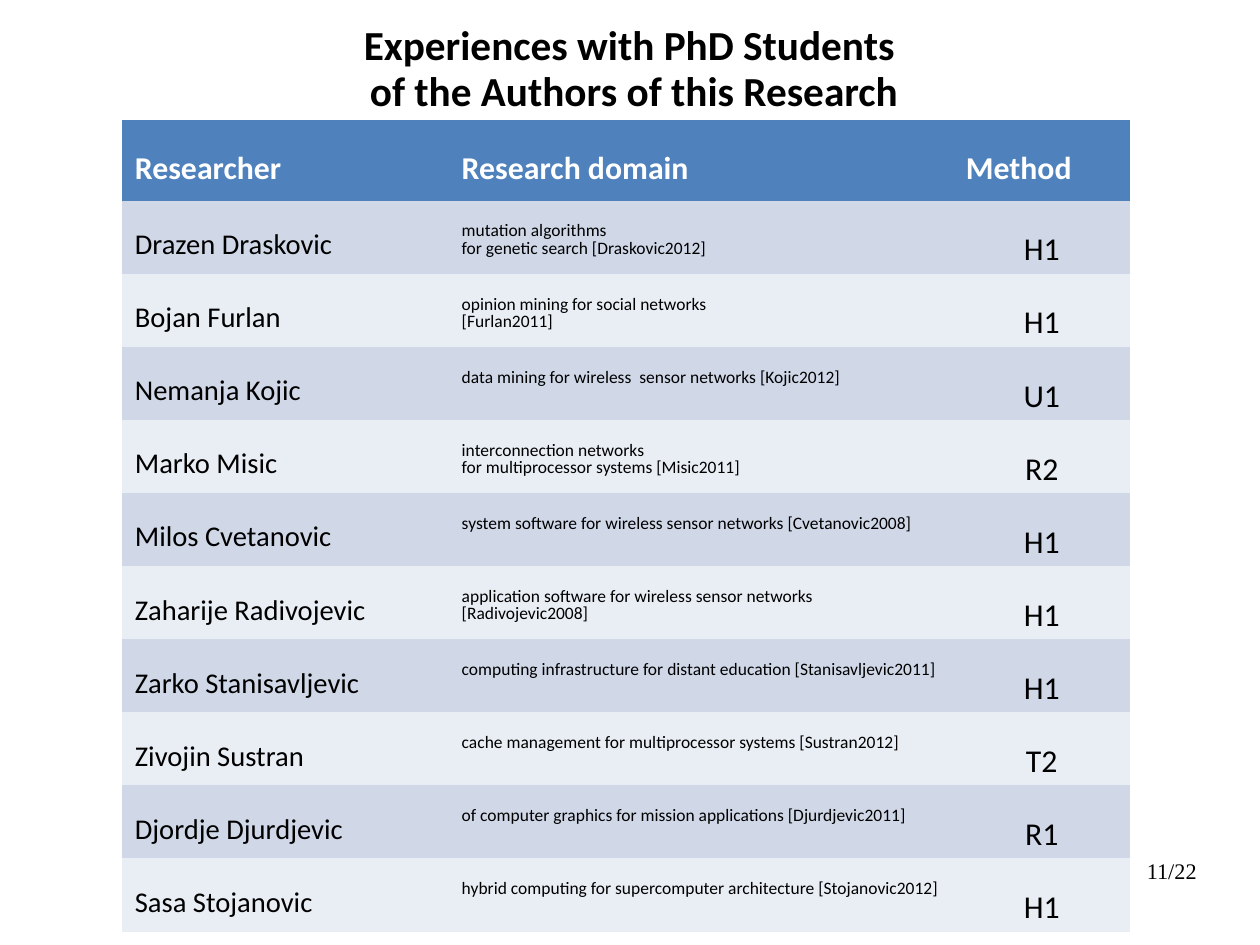
from pptx import Presentation
from pptx.dml.color import RGBColor
from pptx.enum.text import MSO_ANCHOR, MSO_AUTO_SIZE, PP_ALIGN
from pptx.oxml.ns import qn
from pptx.util import Inches, Pt

LEFT, CENTER, RIGHT = PP_ALIGN.LEFT, PP_ALIGN.CENTER, PP_ALIGN.RIGHT
TOP, MIDDLE = MSO_ANCHOR.TOP, MSO_ANCHOR.MIDDLE
NO_AUTOFIT = MSO_AUTO_SIZE.NONE

BLACK = RGBColor(0x00, 0x00, 0x00)
WHITE = RGBColor(0xFF, 0xFF, 0xFF)
HEADER_BLUE = RGBColor(0x4F, 0x81, 0xBD)
BANDS = (RGBColor(0xD0, 0xD8, 0xE8), RGBColor(0xE9, 0xED, 0xF4))

# The slide measures 28 by 21 centimetres
CM_PER_INCH = 2.54
SLIDE_WIDTH, SLIDE_HEIGHT = Inches(28 / CM_PER_INCH), Inches(21 / CM_PER_INCH)

NO_GRID_STYLE = "{2D5ABB26-0587-4C30-8999-92F81FD0307C}"
TITLE_ONLY = 5
COLUMN_WIDTHS = (2.86, 4.41, 1.55)
HEADER_HEIGHT, ROW_HEIGHT = 0.71, 0.63

HEADER = ("Researcher", "Research domain", "Method")
RESEARCHERS = (
    ("Drazen Draskovic", "mutation algorithms \vfor genetic search [Draskovic2012]", "H1"),
    ("Bojan Furlan", "opinion mining for social networks\v[Furlan2011]", "H1"),
    ("Nemanja Kojic", "data mining for wireless  sensor networks [Kojic2012]", "U1"),
    ("Marko Misic", "interconnection networks \vfor multiprocessor systems [Misic2011]", "R2"),
    ("Milos Cvetanovic", "system software for wireless sensor networks [Cvetanovic2008]", "H1"),
    ("Zaharije Radivojevic",
     "application software for wireless sensor networks [Radivojevic2008]", "H1"),
    ("Zarko Stanisavljevic",
     "computing infrastructure for distant education [Stanisavljevic2011]", "H1"),
    ("Zivojin Sustran", "cache management for multiprocessor systems [Sustran2012]", "T2"),
    ("Djordje Djurdjevic", "of computer graphics for mission applications [Djurdjevic2011]", "R1"),
    ("Sasa Stojanovic", "hybrid computing for supercomputer architecture [Stojanovic2012]", "H1"),
)

# Font size, top margin and alignment of each column
HEADER_FORMATS = ((20, 0.3, LEFT),) * 3
BODY_FORMATS = ((18, 0.27, LEFT), (11, 0.19, LEFT), (20, 0.3, CENTER))


def set_attributes(target, values):
    for name, value in values.items():
        setattr(target, name, value)


def write_text(text_frame, text, size, color=BLACK, bold=False,
               font_name="Calibri", alignment=LEFT, line_spacing=1.0):
    text_frame.text = text
    paragraph = text_frame.paragraphs[0]
    set_attributes(paragraph, {"alignment": alignment, "line_spacing": line_spacing})
    for run in paragraph.runs:
        set_attributes(run.font, {"name": font_name, "size": Pt(size), "bold": bold})
        run.font.color.rgb = color


def margins(left, top, right, bottom):
    return {"margin_left": Inches(left), "margin_top": Inches(top),
            "margin_right": Inches(right), "margin_bottom": Inches(bottom)}


def add_title(slide, left, top, width, height):
    title = slide.shapes.title
    set_attributes(title, {"left": Inches(left), "top": Inches(top),
                           "width": Inches(width), "height": Inches(height)})
    set_attributes(title.text_frame, {
        "word_wrap": True, "auto_size": NO_AUTOFIT, "vertical_anchor": MIDDLE,
        **margins(0.11, 0.06, 0.11, 0.06)})
    write_text(title.text_frame,
               "Experiences with PhD Students\v of the Authors of this Research",
               26, bold=True, alignment=CENTER, line_spacing=0.93)


def fill_row(row, texts, formats, fill_color, text_color, bold):
    for cell, text, (size, top_margin, alignment) in zip(row.cells, texts, formats):
        set_attributes(cell, {"vertical_anchor": TOP,
                              **margins(0.11, top_margin, 0.11, 0.06)})
        cell.fill.solid()
        cell.fill.fore_color.rgb = fill_color
        write_text(cell.text_frame, text, size, text_color, bold,
                   alignment=alignment, line_spacing=0.82)


def add_researcher_table(slide, left, top, width, height):
    frame = slide.shapes.add_table(len(RESEARCHERS) + 1, len(HEADER), Inches(left),
                                   Inches(top), Inches(width), Inches(height))
    table = frame.table
    table.horz_banding = False
    table._tbl.tblPr.find(qn("a:tableStyleId")).text = NO_GRID_STYLE
    for column, column_width in zip(table.columns, COLUMN_WIDTHS):
        column.width = Inches(column_width)

    # Header row, then banded body rows
    header_row, *body_rows = table.rows
    header_row.height = Inches(HEADER_HEIGHT)
    fill_row(header_row, HEADER, HEADER_FORMATS, HEADER_BLUE, WHITE, True)
    for index, (row, researcher) in enumerate(zip(body_rows, RESEARCHERS)):
        row.height = Inches(ROW_HEIGHT)
        fill_row(row, researcher, BODY_FORMATS, BANDS[index % 2], BLACK, False)


def add_page_number(slide, left, top, width, height):
    box = slide.shapes.add_textbox(Inches(left), Inches(top), Inches(width), Inches(height))
    set_attributes(box.text_frame, {"word_wrap": True, "vertical_anchor": TOP,
                                    **margins(0, 0, 0, 0)})
    write_text(box.text_frame, "11/22", 14, font_name="Times New Roman",
               alignment=RIGHT, line_spacing=0.87)


def main():
    presentation = Presentation()
    set_attributes(presentation, {"slide_width": SLIDE_WIDTH, "slide_height": SLIDE_HEIGHT})
    slide = presentation.slides.add_slide(presentation.slide_layouts[TITLE_ONLY])
    add_title(slide, 0.55, -0.08, 9.92, 1.38)
    add_researcher_table(slide, 1.07, 1.05, sum(COLUMN_WIDTHS),
                         HEADER_HEIGHT + ROW_HEIGHT * len(RESEARCHERS))
    add_page_number(slide, 7.9, 7.53, 2.57, 0.57)
    presentation.save("out.pptx")


if __name__ == "__main__":
    main()
